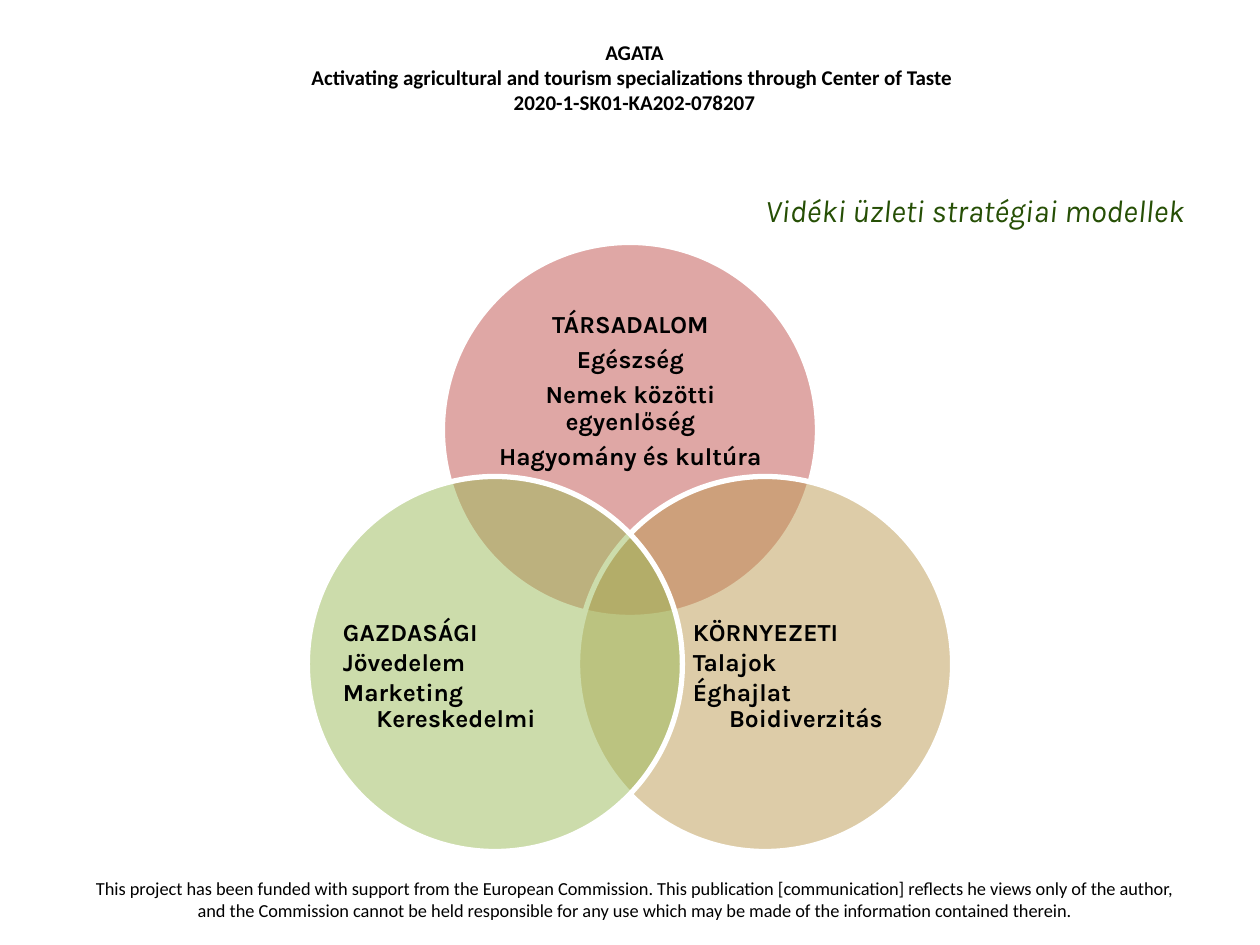
"""Build the slide of three overlapping circles for rural business strategy models."""
from math import cos, radians, sin

from lxml.etree import SubElement
from pptx import Presentation
from pptx.dml.color import RGBColor
from pptx.enum.shapes import MSO_SHAPE as Shape
from pptx.enum.text import MSO_ANCHOR as Anchor, PP_ALIGN as Align
from pptx.oxml.ns import qn
from pptx.util import Emu, Pt

COLORS = {
    "text": "000000", "title": "264F05", "outline": "FFFFFF",
    "society": "C0504D", "environment": "BD9B53", "economy": "9BBB59",
}
TITLE = "Vidéki üzleti stratégiai modellek"
HEADER = [
    "AGATA",
    "Activating agricultural and tourism specializations through Center of Taste ",
    "2020-1-SK01-KA202-078207",
]
FOOTER = [
    "This project has been funded with support from the European Commission. "
    "This publication [communication] reflects he views only of the author, "
    "and the Commission cannot be held responsible for any use which may be made "
    "of the information contained therein."
]
LEFT_LIST = [(Align.LEFT, 2), (Align.LEFT, 2), (Align.LEFT, 0), (Align.CENTER, 0)]
CENTER_LIST = [(Align.CENTER, 5)] * 4
CIRCLES = [
    ("society", -90, (493, 307, 275, 169), CENTER_LIST,
     ["TÁRSADALOM", "Egészség", "Nemek közötti egyenlőség", "Hagyomány és kultúra"]),
    ("environment", 30, (693, 573, 226, 207), LEFT_LIST,
     ["KÖRNYEZETI", "Talajok", "Éghajlat", "Boidiverzitás"]),
    ("economy", 150, (343, 573, 226, 207), LEFT_LIST,
     ["GAZDASÁGI", "Jövedelem", "Marketing", "Kereskedelmi"]),
]
CENTER_X, CENTER_Y, ORBIT, DIAMETER = 630, 586, 156, 375
PX = 914400 / 126


def px(*values):
    return [Emu(round(value * PX)) for value in values]


def style(font, name, size, color="text", bold=False, italic=False):
    font.name, font.size, font.bold, font.italic = name, Pt(size), bold, italic
    font.color.rgb = RGBColor.from_string(COLORS[color])


def add_text(slide, box, lines, name, size, bold=False, layout=None):
    frame = slide.shapes.add_textbox(*px(*box)).text_frame
    frame.word_wrap = True
    frame.text = "\n".join(lines)
    for index, paragraph in enumerate(frame.paragraphs):
        paragraph.alignment = Align.CENTER
        if layout:
            paragraph.alignment, gap = layout[index]
            paragraph.line_spacing = 0.9
            paragraph.space_after = Pt(gap)
        style(paragraph.font, name, size, bold=bold)
    return frame


def add_circle(slide, color, angle):
    left = CENTER_X + ORBIT * cos(radians(angle)) - DIAMETER / 2
    top = CENTER_Y + ORBIT * sin(radians(angle)) - DIAMETER / 2
    circle = slide.shapes.add_shape(Shape.OVAL, *px(left, top, DIAMETER, DIAMETER))
    circle.shadow.inherit = False
    circle.fill.solid()
    circle.fill.fore_color.rgb = RGBColor.from_string(COLORS[color])
    fill_color = circle.element.spPr.find(qn("a:solidFill"))[0]
    SubElement(fill_color, qn("a:alpha"), val="50000")
    circle.line.color.rgb = RGBColor.from_string(COLORS["outline"])
    circle.line.width = Pt(3)


def add_title(slide):
    title = slide.shapes.title
    title.left, title.top, title.width, title.height = px(63, 185, 1134, 49)
    title.text_frame.text = TITLE
    title.text_frame.vertical_anchor = Anchor.MIDDLE
    paragraph = title.text_frame.paragraphs[0]
    paragraph.alignment = Align.RIGHT
    style(paragraph.font, "Karla", 18, "title", italic=True)


def main():
    presentation = Presentation()
    presentation.slide_width, presentation.slide_height = px(1260, 945)
    slide = presentation.slides.add_slide(presentation.slide_layouts[5])
    add_title(slide)
    add_text(slide, (262, 33, 745, 89), HEADER, "Calibri", 12, bold=True)
    add_text(slide, (68, 871, 1134, 59), FOOTER, "Calibri", 10.5)
    for color, angle, box, layout, lines in CIRCLES:
        add_circle(slide, color, angle)
        frame = add_text(slide, box, lines, "Karla", 14, True, layout)
        frame.vertical_anchor = Anchor.MIDDLE
        frame.margin_left = frame.margin_right = 0
        frame.margin_top = frame.margin_bottom = 0
    presentation.save("out.pptx")


if __name__ == "__main__":
    main()
